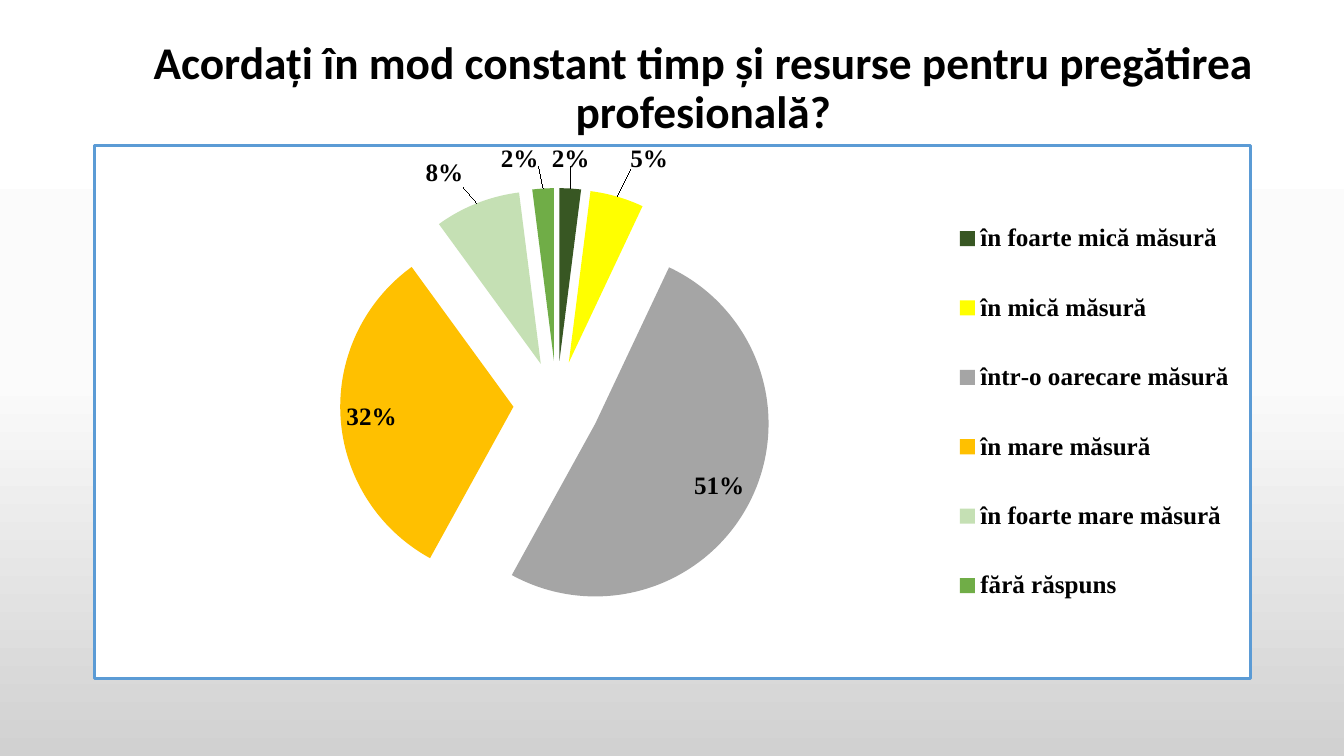
"""Build a slide with an exploded pie chart on time given to professional training."""
from copy import deepcopy
from lxml.etree import SubElement
from pptx import Presentation
from pptx.chart.data import CategoryChartData as ChartData
from pptx.dml.color import RGBColor
from pptx.enum.chart import XL_CHART_TYPE as Kind, XL_LABEL_POSITION as Spot
from pptx.enum.chart import XL_LEGEND_POSITION as Side
from pptx.enum.lang import MSO_LANGUAGE_ID as Lang
from pptx.enum.text import MSO_ANCHOR as Anchor, PP_ALIGN as Align
from pptx.oxml import parse_xml
from pptx.oxml.ns import nsdecls, qn
from pptx.util import Cm, Pt


def style(font, name, size):
    font.name, font.size, font.bold = name, Pt(size), True
    font.color.rgb = RGBColor.from_string("000000")


def place(prev, **vals):
    node = parse_xml(f"<c:layout {nsdecls('c')}><c:manualLayout/></c:layout>")
    for key, val in vals.items():
        SubElement(node[0], qn(f"c:{key}")).set("val", str(val))
    prev.addnext(node)


deck = Presentation()
deck.slide_width, deck.slide_height = Cm(33.87), Cm(19.05)
slide = deck.slides.add_slide(deck.slide_layouts[5])

back = slide.background.fill
back.gradient()
back.gradient_angle = 270
stops = slide.element.find(".//" + qn("a:gsLst"))
stops.insert(1, deepcopy(stops[0]))
tones = [(0, "FFFFFF"), (0.5, "FBFBFB"), (1, "D1D1D1")]
for stop, (pos, tone) in zip(back.gradient_stops, tones):
    stop.position = pos
    stop.color.rgb = RGBColor.from_string(tone)

title = slide.shapes.title
title.left, title.top, title.width, title.height = Cm(3.12), Cm(1.01), Cm(29.21), Cm(3.68)
frame = title.text_frame
frame.text = "Acordaţi în mod constant timp şi resurse pentru pregătirea profesională?"
frame.word_wrap = True
frame.vertical_anchor = Anchor.TOP
frame.margin_top = Cm(0)
para = frame.paragraphs[0]
para.alignment, para.line_spacing = Align.CENTER, 0.9
style(para.runs[0].font, "Calibri", 32.4)
para.runs[0].font.language_id = Lang.ROMANIAN

rows = [
    ("în foarte mică măsură", 2, "385723", (0, -0.03)),
    ("în mică măsură", 5, "FFFF00", (0.01, -0.04)),
    ("într-o oarecare măsură", 51, "A5A5A5", None),
    ("în mare măsură", 32, "FFC000", None),
    ("în foarte mare măsură", 8, "C5E0B4", (-0.01, -0.02)),
    ("fără răspuns", 2, "70AD47", (-0.02, -0.03)),
]
data = ChartData()
data.categories = [row[0] for row in rows]
data.add_series("Series 1", [row[1] for row in rows])
chart = slide.shapes.add_chart(
    Kind.PIE, Cm(2.34), Cm(3.63), Cm(29.21), Cm(13.51), data).chart
chart.has_title = False
style(chart.font, "Times New Roman", 18)

space = chart.element
space.find(qn("c:chart")).addnext(parse_xml(
    f"<c:spPr {nsdecls('c', 'a')}>"
    '<a:solidFill><a:srgbClr val="FFFFFF"/></a:solidFill>'
    '<a:ln w="25400"><a:solidFill><a:srgbClr val="5B9BD5"/></a:solidFill></a:ln>'
    "</c:spPr>"))
area = space.find(".//" + qn("c:plotArea"))
for old in area.findall(qn("c:layout")):
    area.remove(old)
mark = parse_xml(f"<c:layout {nsdecls('c')}/>")
area.insert(0, mark)
place(mark, layoutTarget="inner", xMode="edge", yMode="edge",
      x=0.07, y=0.08, w=0.66, h=0.81)
area.remove(mark)

chart.has_legend = True
legend = chart.legend
legend.position, legend.include_in_layout = Side.RIGHT, False
style(legend.font, "Times New Roman", 18)
key = space.find(".//" + qn("c:legend"))
for old in key.findall(qn("c:layout")):
    key.remove(old)
place(key.find(qn("c:legendPos")), xMode="edge", yMode="edge",
      x=0.74, y=0.07, w=0.25, h=0.86)

plot = chart.plots[0]
plot.vary_by_categories = True
pie = plot.series[0]
burst = parse_xml(f'<c:explosion {nsdecls("c")} val="25"/>')
space.find(".//" + qn("c:ser")).find(qn("c:tx")).addnext(burst)
labels = pie.data_labels
labels.show_value, labels.show_percentage = False, True
labels.number_format, labels.number_format_is_linked = "0%", False
labels.position = Spot.INSIDE_END
style(labels.font, "Times New Roman", 18)

for i, (name, share, tone, shift) in enumerate(rows):
    point = pie.points[i]
    point.format.fill.solid()
    point.format.fill.fore_color.rgb = RGBColor.from_string(tone)
    if shift:
        style(point.data_label.font, "Times New Roman", 18)
        point.data_label.position = Spot.OUTSIDE_END

shifts = [row[3] for row in rows if row[3]]
for tag, (x, y) in zip(space.iter(qn("c:dLbl")), shifts):
    place(tag.find(qn("c:idx")), x=x, y=y)
    tag.find(qn("c:showVal")).set("val", "0")
    tag.find(qn("c:showPercent")).set("val", "1")

deck.save("out.pptx")
